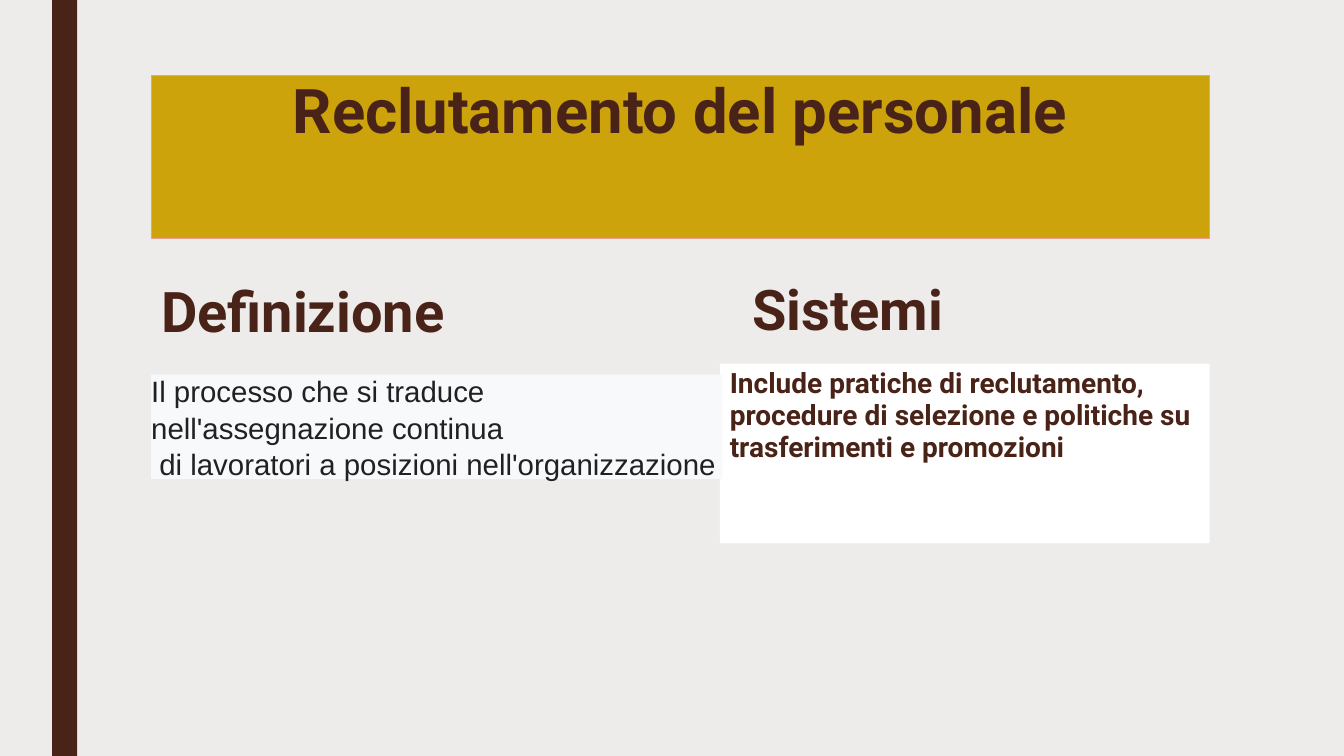
from dataclasses import dataclass

import pptx
import pptx.dml.color
import pptx.enum.shapes
import pptx.enum.text
import pptx.util

WIDTH = pptx.util.Inches(13.33)
HEIGHT = pptx.util.Inches(7.5)
COLUMN = WIDTH / 16
ROW = HEIGHT / 9

BROWN = "4A2318"
ANCHOR = pptx.enum.text.MSO_ANCHOR
ALIGN = pptx.enum.text.PP_ALIGN


@dataclass
class Panel:
    left: float
    top: float
    columns: float
    rows: float
    lines: tuple[str, ...] = ()
    size: float = 20
    spacing: float = 1.0
    fill: str | None = None
    border: str | None = None
    font: str = "Roboto"
    color: str = BROWN
    bold: bool = True
    align: ALIGN = ALIGN.LEFT
    anchor: ANCHOR = ANCHOR.TOP
    side_inset: float = 0.1
    end_inset: float = 0.05


PANELS = [
    Panel(0.62, 0, 0.3, 9, fill=BROWN),
    Panel(1.8, 0.9, 12.6, 1.94, ("Reclutamento del personale",), 44, 0.89,
          fill="CDA30C", border="EC9E92", align=ALIGN.CENTER),
    Panel(1.8, 3.07, 5.83, 1.08, ("Definizione",), 40, 0.84, anchor=ANCHOR.BOTTOM),
    Panel(8.84, 3.05, 5.83, 1.08, ("Sistemi",), 40, 0.84, anchor=ANCHOR.BOTTOM),
    Panel(8.57, 4.33, 5.83, 2.14,
          ("Include pratiche di reclutamento, procedure di selezione "
           "e politiche su trasferimenti e promozioni",), 20, 0.94, fill="FFFFFF"),
    Panel(1.8, 4.46, 6.8, 1.24,
          ("Il processo che si traduce",
           "nell'assegnazione continua",
           " di lavoratori a posizioni nell'organizzazione"), 21, 1.04,
          fill="F8F9FA", font="Arial", color="202124", bold=False,
          anchor=ANCHOR.MIDDLE, side_inset=0, end_inset=-0.01),
]


def rgb(code: str) -> pptx.dml.color.RGBColor:
    return pptx.dml.color.RGBColor.from_string(code)


def write_lines(frame, panel: Panel) -> None:
    frame.word_wrap = True
    frame.vertical_anchor = panel.anchor
    frame.margin_left = frame.margin_right = pptx.util.Inches(panel.side_inset)
    frame.margin_top = frame.margin_bottom = pptx.util.Inches(panel.end_inset)
    for index, line in enumerate(panel.lines):
        paragraph = frame.add_paragraph() if index else frame.paragraphs[0]
        paragraph.text = line
        paragraph.alignment = panel.align
        paragraph.line_spacing = panel.spacing
        paragraph.font.name = panel.font
        paragraph.font.size = pptx.util.Pt(panel.size)
        paragraph.font.bold = panel.bold
        paragraph.font.color.rgb = rgb(panel.color)


def draw_panel(page, panel: Panel) -> None:
    place = (round(panel.left * COLUMN), round(panel.top * ROW),
             round(panel.columns * COLUMN), round(panel.rows * ROW))
    if panel.fill:
        box = page.shapes.add_shape(pptx.enum.shapes.MSO_SHAPE.RECTANGLE, *place)
        box.shadow.inherit = False
        box.fill.solid()
        box.fill.fore_color.rgb = rgb(panel.fill)
        if panel.border:
            box.line.color.rgb = rgb(panel.border)
            box.line.width = pptx.util.Pt(0.75)
        else:
            box.line.fill.background()
    else:
        box = page.shapes.add_textbox(*place)
    if panel.lines:
        write_lines(box.text_frame, panel)


def main() -> None:
    deck = pptx.Presentation()
    deck.slide_width, deck.slide_height = WIDTH, HEIGHT
    page = deck.slides.add_slide(deck.slide_layouts[6])
    page.background.fill.solid()
    page.background.fill.fore_color.rgb = rgb("EDECEB")
    for panel in PANELS:
        draw_panel(page, panel)
    deck.save("out.pptx")


if __name__ == "__main__":
    main()
